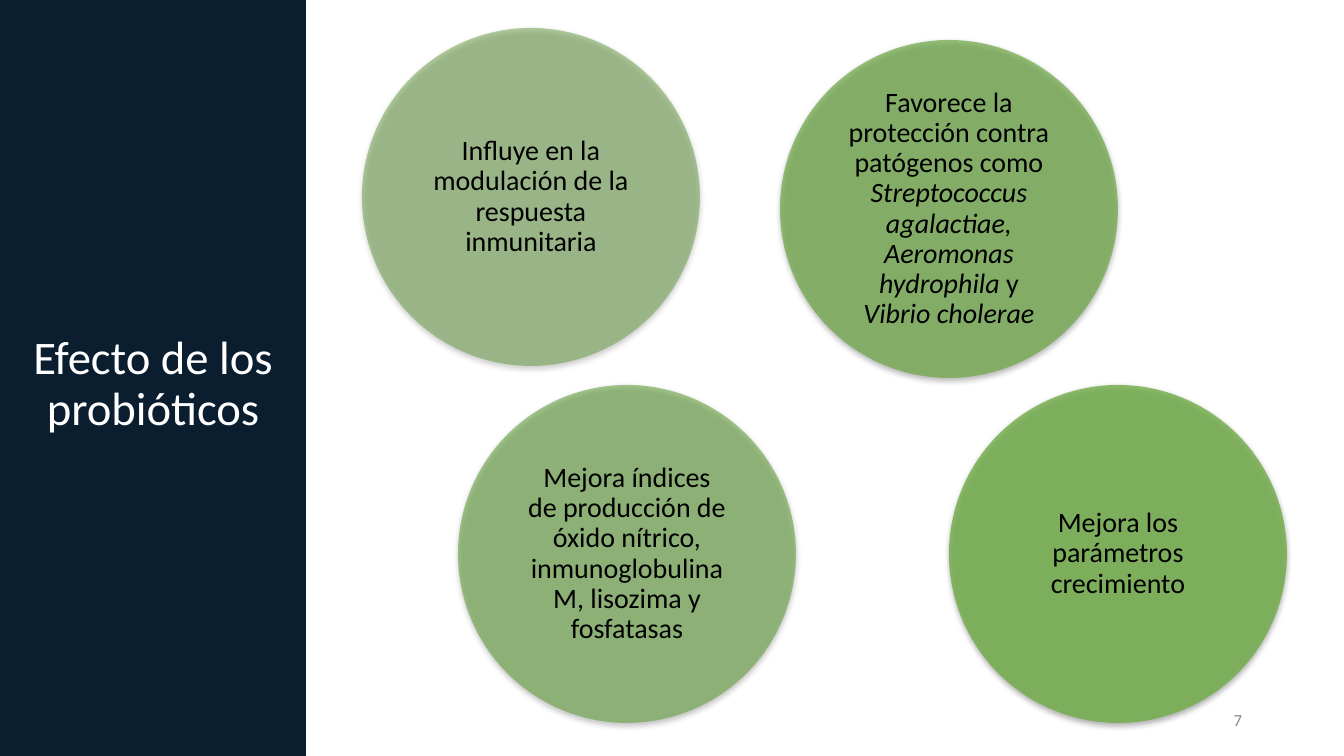
from dataclasses import dataclass

from lxml.etree import SubElement
from pptx import Presentation
from pptx.dml.color import RGBColor as RGB
from pptx.enum.shapes import MSO_SHAPE as Shape
from pptx.enum.text import MSO_ANCHOR as Anchor, PP_ALIGN as Align
from pptx.oxml.ns import qn
from pptx.util import Emu, Pt

PX = 914400 / 134.4


def px(n: int) -> Emu:
    return Emu(round(n * PX))


@dataclass(frozen=True)
class Theme:
    font: str = "Calibri"
    panel: str = "0B1E30"
    title: str = "FFFFFF"
    body: str = "000000"
    muted: str = "888888"
    shadow: str = "000000"
    shadow_alpha: int = 38
    title_pt: int = 25
    body_pt: int = 15
    number_pt: int = 9


@dataclass(frozen=True)
class Span:
    text: str
    italic: bool = False


@dataclass(frozen=True)
class Box:
    x: int
    y: int
    w: int
    h: int

    def inset(self, d: int) -> "Box":
        return Box(self.x + d, self.y + d, self.w - 2 * d, self.h - 2 * d)

    def emu(self) -> tuple[Emu, ...]:
        return tuple(px(n) for n in (self.x, self.y, self.w, self.h))


@dataclass(frozen=True)
class Circle:
    x: int
    y: int
    color: str
    alpha: int
    spans: tuple[Span, ...]


T = Theme()
DIAMETER = 338
TEXT_INSET = 49
LOWER_ROW = 385

CIRCLES = (
    Circle(362, 28, "669D40", 50, (
        Span("Influye en la modulación de la respuesta inmunitaria"),)),
    Circle(458, LOWER_ROW, "69A343", 60, (
        Span("Mejora índices de producción de óxido nítrico, "
             "inmunoglobulina M, lisozima y fosfatasas"),)),
    Circle(780, 40, "6DA845", 70, (
        Span("Favorece la protección contra patógenos como "),
        Span("Streptococcus agalactiae, Aeromonas hydrophila ", True),
        Span("y "),
        Span("Vibrio cholerae", True))),
    Circle(949, LOWER_ROW, "71AE48", 80, (
        Span("Mejora los parámetros crecimiento"),)),
)


def apply(obj, values: dict) -> None:
    for name, value in values.items():
        setattr(obj, name, value)


def write(sp, spans: tuple[Span, ...], size: int, color: str, margins: tuple[int, int],
          align=Align.CENTER, spacing: float = 0.9) -> None:
    tf = sp.text_frame
    mx, my = (px(n) for n in margins)
    apply(tf, dict(word_wrap=True, vertical_anchor=Anchor.MIDDLE, margin_left=mx,
                   margin_right=mx, margin_top=my, margin_bottom=my))
    p = tf.paragraphs[0]
    apply(p, dict(alignment=align, line_spacing=spacing))
    for span in spans:
        r = p.add_run()
        r.text = span.text
        apply(r.font, dict(name=T.font, size=Pt(size), italic=span.italic))
        r.font.color.rgb = RGB.from_string(color)


def add_filled(s, kind, box: Box, color: str):
    sp = s.shapes.add_shape(kind, *box.emu())
    sp.shadow.inherit = False
    sp.fill.solid()
    sp.fill.fore_color.rgb = RGB.from_string(color)
    sp.line.fill.background()
    return sp


def set_alpha(clr, percent: int) -> None:
    SubElement(clr, qn("a:alpha"), val=str(percent * 1000))


def add_shadow(sp) -> None:
    effects = sp._element.spPr.find(qn("a:effectLst"))
    outer = SubElement(effects, qn("a:outerShdw"), blurRad="40000", dist="20000",
                       dir="5400000", rotWithShape="0")
    set_alpha(SubElement(outer, qn("a:srgbClr"), val=T.shadow), T.shadow_alpha)


def add_circle(s, c: Circle) -> None:
    box = Box(c.x, c.y, DIAMETER, DIAMETER)
    sp = add_filled(s, Shape.OVAL, box, c.color)
    set_alpha(sp._element.spPr.find(qn("a:solidFill"))[0], c.alpha)
    add_shadow(sp)
    tb = s.shapes.add_textbox(*box.inset(TEXT_INSET).emu())
    write(tb, c.spans, T.body_pt, T.body, (19, 3))


def main() -> None:
    prs = Presentation()
    apply(prs, dict(slide_width=px(1344), slide_height=px(756)))
    s = prs.slides.add_slide(prs.slide_layouts[6])

    panel = add_filled(s, Shape.RECTANGLE, Box(0, -4, 306, 778), T.panel)
    write(panel, (Span("Efecto de los probióticos"),), T.title_pt, T.title, (4, 4))

    for c in CIRCLES:
        add_circle(s, c)

    number = s.shapes.add_textbox(*Box(949, 700, 302, 40).emu())
    write(number, (Span("7"),), T.number_pt, T.muted, (9, 5), Align.RIGHT, 1.0)

    prs.save("out.pptx")


if __name__ == "__main__":
    main()
